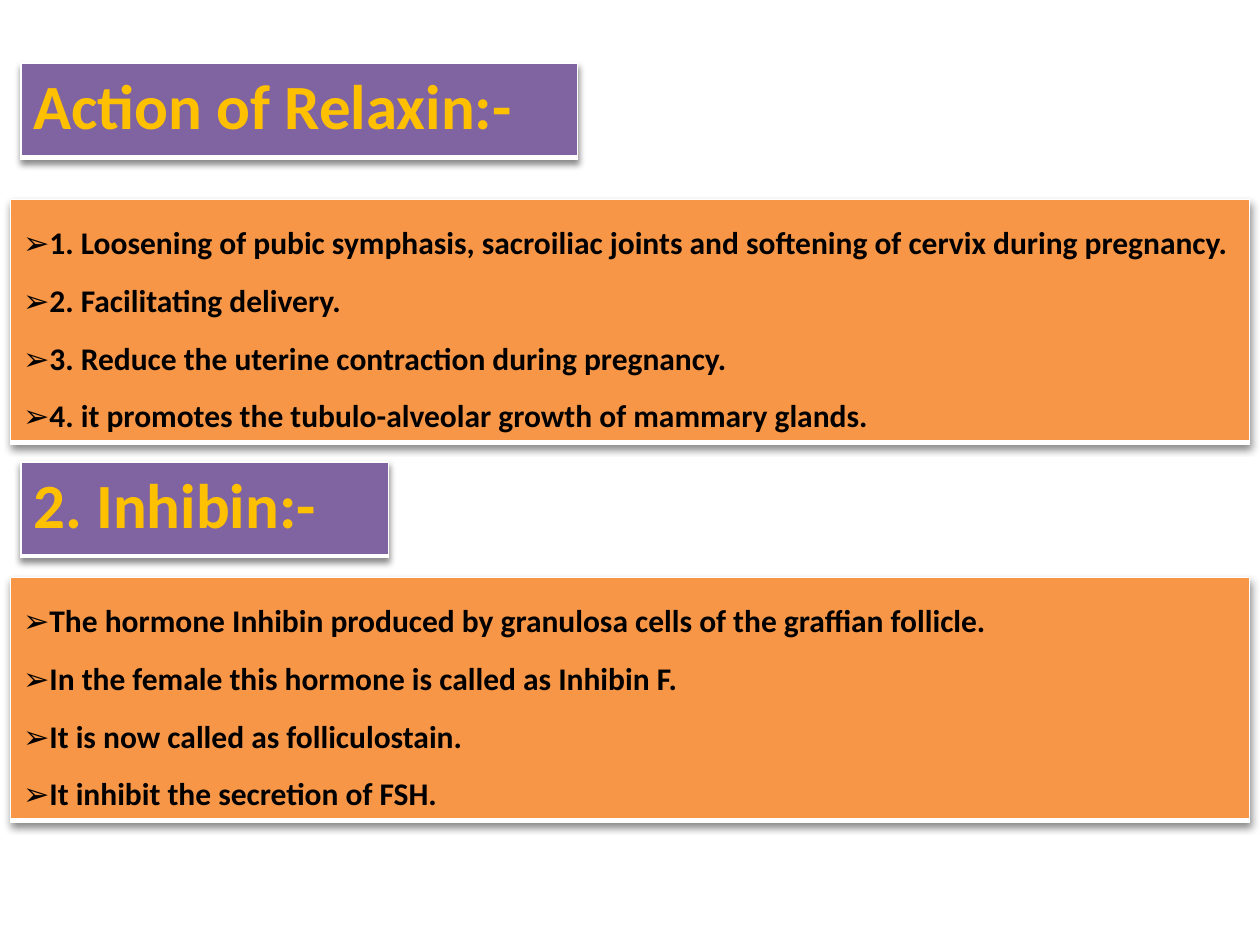
from dataclasses import dataclass

from lxml import etree
from pptx import Presentation
from pptx import util as u
from pptx.dml.color import RGBColor
from pptx.enum import text
from pptx.oxml import parse_xml
from pptx.oxml.ns import nsdecls, qn


@dataclass(frozen=True)
class Theme:
    font: str = "Calibri"
    head_fill: str = "8064A2"
    head_ink: str = "FFC000"
    head_size: int = 36
    list_fill: str = "F79646"
    list_ink: str = "000000"
    list_size: int = 18
    edge: str = "FFFFFF"
    shade: str = "000000"
    bullet: str = "➢"


@dataclass(frozen=True)
class Box:
    """A one-cell table; lengths are in centimetres."""
    left: float
    top: float
    width: float
    height: float
    lines: tuple[str, ...]
    listed: bool = False


THEME = Theme()
HEAD = {"left": 0.42, "height": 1.9}
LIST = {"left": 0.21, "width": 24.98, "height": 4.7, "listed": True}
BOXES = (
    Box(top=1.27, width=11.22, lines=("Action of Relaxin:-",), **HEAD),
    Box(top=4.02, lines=(
        "1. Loosening of pubic symphasis, sacroiliac joints and softening of cervix during pregnancy.",
        "2. Facilitating delivery.",
        "3. Reduce the uterine contraction during pregnancy.",
        "4. it promotes the tubulo-alveolar growth of mammary glands.",
    ), **LIST),
    Box(top=9.31, width=7.41, lines=("2. Inhibin:-",), **HEAD),
    Box(top=11.64, lines=(
        "The hormone Inhibin produced by granulosa cells of the graffian follicle.",
        "In the female this hormone is called as Inhibin F.",
        "It is now called as folliculostain.",
        "It inhibit the secretion of FSH.",
    ), **LIST),
)


def add_edges(cell) -> None:
    """Thin cell borders with a heavier one below."""
    props = cell._tc.get_or_add_tcPr()
    for side, width in (("L", 1), ("R", 1), ("T", 1), ("B", 3)):
        props.append(parse_xml(
            f'<a:ln{side} {nsdecls("a")} w="{u.Pt(width)}"><a:solidFill>'
            f'<a:srgbClr val="{THEME.edge}"/></a:solidFill></a:ln{side}>'))


def add_shade(table) -> None:
    """Soft shadow below the whole table."""
    table._tbl.tblPr.insert(0, parse_xml(
        f'<a:effectLst {nsdecls("a")}><a:outerShdw blurRad="50000" dist="30000" '
        f'dir="5400000" rotWithShape="0"><a:srgbClr val="{THEME.shade}">'
        '<a:alpha val="45000"/></a:srgbClr></a:outerShdw></a:effectLst>'))


def add_bullet(para) -> None:
    para.alignment = text.PP_ALIGN.JUSTIFY
    para.line_spacing = 1.5
    props = para._p.get_or_add_pPr()
    props.set("marL", "0")
    props.set("indent", "0")
    etree.SubElement(props, qn("a:buFont")).set("typeface", THEME.font)
    etree.SubElement(props, qn("a:buChar")).set("char", THEME.bullet)


def add_line(para, line: str, size: int, ink: str) -> None:
    run = para.add_run()
    run.text = line
    run.font.name = THEME.font
    run.font.size = u.Pt(size)
    run.font.bold = True
    run.font.color.rgb = RGBColor.from_string(ink)


def add_box(slide, box: Box) -> None:
    fill, ink, size = (
        (THEME.list_fill, THEME.list_ink, THEME.list_size) if box.listed
        else (THEME.head_fill, THEME.head_ink, THEME.head_size))
    table = slide.shapes.add_table(
        1, 1, u.Cm(box.left), u.Cm(box.top), u.Cm(box.width), u.Cm(box.height)).table
    table.first_row = table.horz_banding = False
    add_shade(table)
    cell = table.cell(0, 0)
    add_edges(cell)
    cell.fill.solid()
    cell.fill.fore_color.rgb = RGBColor.from_string(fill)
    frame = cell.text_frame
    for i, line in enumerate(box.lines):
        para = frame.add_paragraph() if i else frame.paragraphs[0]
        if box.listed:
            add_bullet(para)
        add_line(para, line, size, ink)


def main() -> None:
    deck = Presentation()
    deck.slide_width, deck.slide_height = u.Cm(25.4), u.Cm(19.05)
    slide = deck.slides.add_slide(deck.slide_layouts[6])
    for box in BOXES:
        add_box(slide, box)
    deck.save("out.pptx")


if __name__ == "__main__":
    main()
